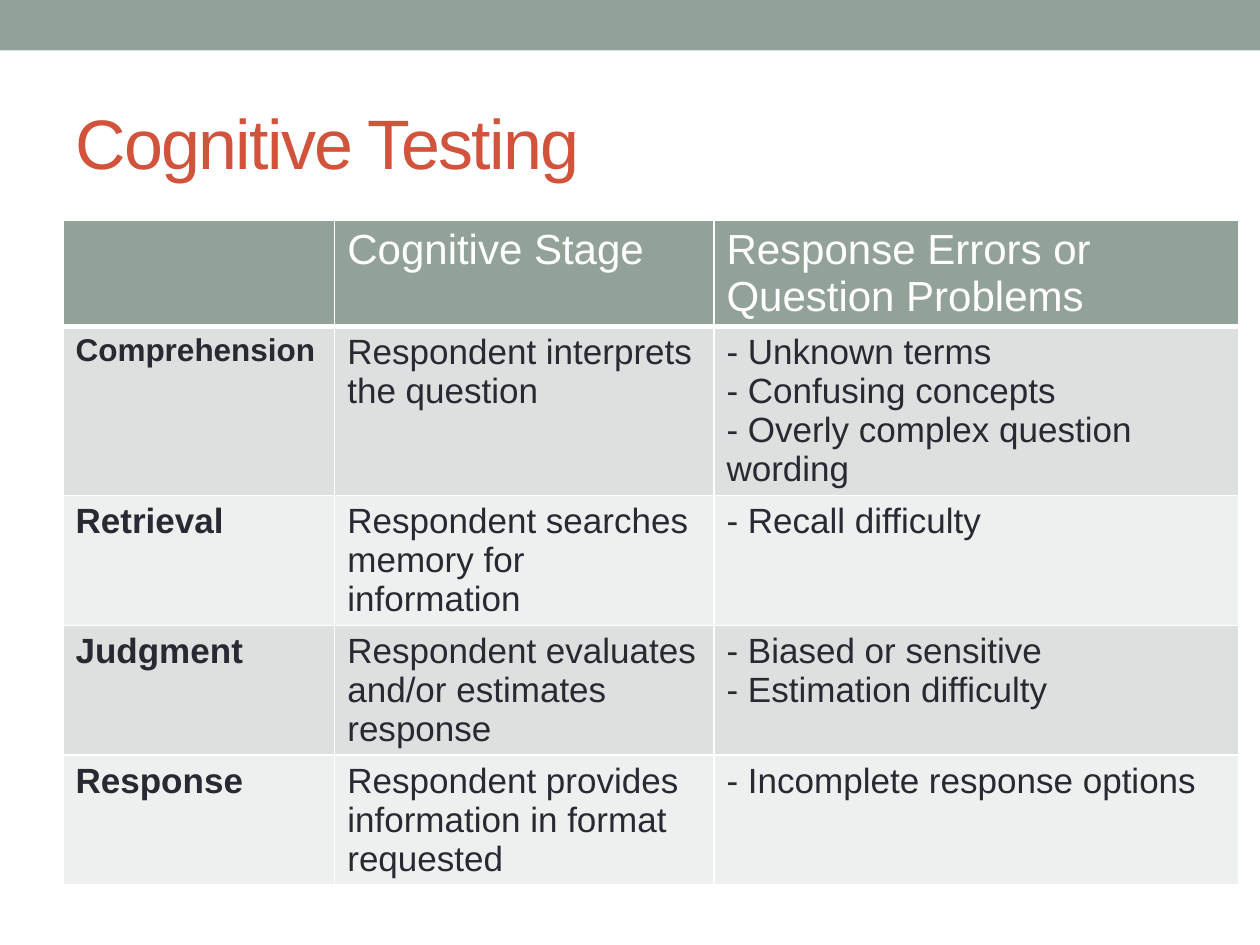
"""Build the Cognitive Testing slide with its table of response stages."""
from pptx import Presentation
from pptx.dml.color import RGBColor
from pptx.enum.shapes import MSO_SHAPE
from pptx.enum.text import MSO_ANCHOR, PP_ALIGN
from pptx.oxml import parse_xml
from pptx.oxml.ns import nsdecls
from pptx.util import Pt

SAGE = RGBColor(0x93, 0xA2, 0x99)
RUST = RGBColor(0xD2, 0x53, 0x3C)
INK = RGBColor(0x29, 0x29, 0x34)
WHITE = RGBColor(0xFF, 0xFF, 0xFF)
BANDS = [RGBColor(0xDC, 0xE0, 0xDE), RGBColor(0xEE, 0xF0, 0xEF)]

ROWS = [
    ["", "Cognitive Stage", "Response Errors or Question Problems"],
    ["Comprehension", "Respondent interprets the question",
     "- Unknown terms\n- Confusing concepts\n- Overly complex question wording"],
    ["Retrieval", "Respondent searches memory for information",
     "- Recall difficulty"],
    ["Judgment", "Respondent evaluates and/or estimates response",
     "- Biased or sensitive\n- Estimation difficulty"],
    ["Response", "Respondent provides information in format requested",
     "- Incomplete response options"],
]
WIDTHS = [155.3, 216.7, 300]
HEIGHTS = [57, 90, 69, 69, 69]


def write(frame, text, size=20, color=INK, bold=False, space=0):
    frame.text = text
    for para in frame.paragraphs:
        para.alignment = PP_ALIGN.LEFT
        for run in para.runs:
            font = run.font
            font.name, font.size, font.bold = "Arial", Pt(size), bold
            font.color.rgb = color
            if space:
                run._r.get_or_add_rPr().set("spc", str(space))


def edge(cell, sides):
    props = cell._tc.get_or_add_tcPr()
    for spot, (side, width) in enumerate(sides.items()):
        props.insert(spot, parse_xml(
            f'<a:{side} {nsdecls("a")} w="{Pt(width)}"><a:solidFill>'
            f'<a:srgbClr val="{WHITE}"/></a:solidFill></a:{side}>'))


deck = Presentation()
deck.slide_width, deck.slide_height = Pt(720), Pt(540)
slide = deck.slides.add_slide(deck.slide_layouts[5])

bar = slide.shapes.add_shape(MSO_SHAPE.RECTANGLE, 0, 0, Pt(720), Pt(28.8))
bar.shadow.inherit = False
bar.fill.solid()
bar.fill.fore_color.rgb = SAGE
bar.line.fill.background()

title = slide.shapes.title
title.left, title.top = Pt(36), Pt(42)
title.width, title.height = Pt(648), Pt(78)
write(title.text_frame, "Cognitive Testing", size=40, color=RUST, space=-100)
title.text_frame.vertical_anchor = MSO_ANCHOR.MIDDLE

table = slide.shapes.add_table(
    len(ROWS), len(WIDTHS), Pt(36), Pt(126), Pt(sum(WIDTHS)), Pt(sum(HEIGHTS))).table
for col, width in zip(table.columns, WIDTHS):
    col.width = Pt(width)
for r, (texts, height) in enumerate(zip(ROWS, HEIGHTS)):
    table.rows[r].height = Pt(height)
    for c, text in enumerate(texts):
        cell = table.cell(r, c)
        cell.fill.solid()
        if r == 0:
            cell.fill.fore_color.rgb = SAGE
            write(cell.text_frame, text, size=24, color=WHITE)
        else:
            cell.fill.fore_color.rgb = BANDS[(r - 1) % 2]
            size = 18 if text == "Comprehension" else 20
            write(cell.text_frame, text, size=size, bold=c == 0)
        edge(cell, {"lnL": 1, "lnR": 1, "lnT": 3 if r == 1 else 1,
                    "lnB": 3 if r == 0 else 1})

deck.save("out.pptx")
